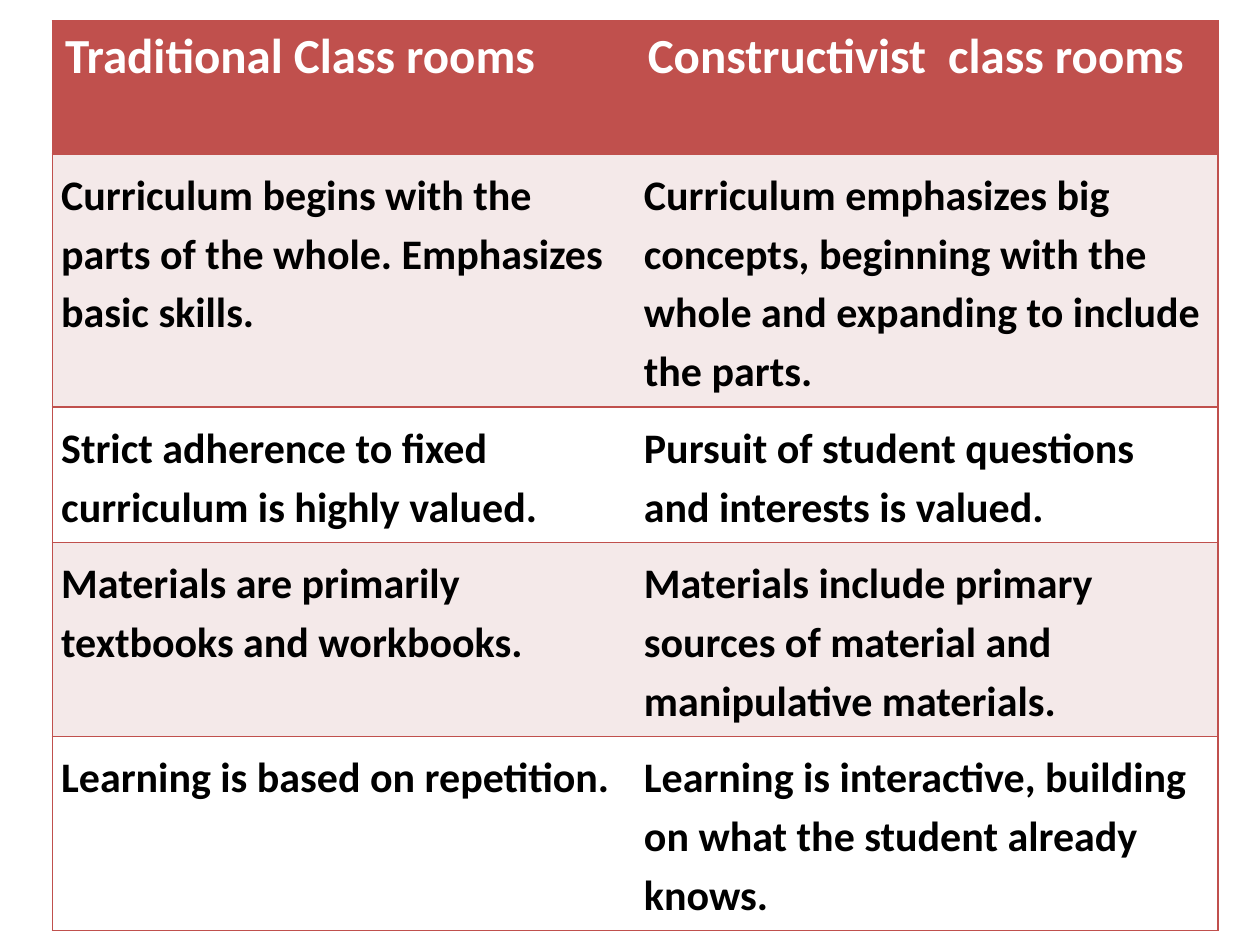
from dataclasses import dataclass

from lxml import etree
from pptx import Presentation
from pptx import util as u
from pptx.dml.color import RGBColor
from pptx.oxml import ns

Pt = u.Pt


@dataclass(frozen=True)
class Theme:
    font: str = "Calibri"
    accent: str = "C0504D"
    band: str = "F4E9E9"
    plain: str = "FFFFFF"
    ink: str = "000000"
    header_size: int = 28
    body_size: int = 24
    line_spacing: float = 1.15
    body_inset: int = 5
    border: int = 1


THEME = Theme()

ROWS = [
    ("Traditional Class rooms", "Constructivist  class rooms"),
    ("Curriculum begins with the parts of the whole. Emphasizes basic skills.",
     "Curriculum emphasizes big concepts, beginning with the whole and "
     "expanding to include the parts."),
    ("Strict adherence to fixed curriculum is highly valued.",
     "Pursuit of student questions and interests is valued."),
    ("Materials are primarily textbooks and workbooks.",
     "Materials include primary sources of material and manipulative materials."),
    ("Learning is based on repetition.",
     "Learning is interactive, building on what the student already knows."),
]
ROW_WEIGHTS = [76, 144.5, 77, 111, 111]


def set_borders(cell, sides):
    tc_pr = cell._tc.get_or_add_tcPr()
    for i, side in enumerate("LRTB"):
        ln = etree.Element(ns.qn(f"a:ln{side}"), w=str(Pt(THEME.border)))
        if side in sides:
            fill = etree.SubElement(ln, ns.qn("a:solidFill"))
            etree.SubElement(fill, ns.qn("a:srgbClr"), val=THEME.accent)
        else:
            etree.SubElement(ln, ns.qn("a:noFill"))
        tc_pr.insert(i, ln)


def style_cell(cell, text, fill, color, size):
    cell.text = text
    cell.fill.solid()
    cell.fill.fore_color.rgb = RGBColor.from_string(fill)
    p = cell.text_frame.paragraphs[0]
    p.font.name = THEME.font
    p.font.size = Pt(size)
    p.font.bold = True
    p.font.color.rgb = RGBColor.from_string(color)
    return p


def add_comparison(s, left, top, width, height):
    n_cols = len(ROWS[0])
    table = s.shapes.add_table(len(ROWS), n_cols, Pt(left), Pt(top),
                               Pt(width), Pt(height)).table
    for col in table.columns:
        col.width = Pt(width / n_cols)
    for r, texts in enumerate(ROWS):
        table.rows[r].height = Pt(height * ROW_WEIGHTS[r] / sum(ROW_WEIGHTS))
        for c, text in enumerate(texts):
            cell = table.cell(r, c)
            if r == 0:
                style_cell(cell, text, THEME.accent, THEME.plain, THEME.header_size)
            else:
                fill = THEME.band if r % 2 else THEME.plain
                p = style_cell(cell, text, fill, THEME.ink, THEME.body_size)
                p.line_spacing = THEME.line_spacing
                cell.margin_left = cell.margin_right = Pt(THEME.body_inset)
                cell.margin_top = cell.margin_bottom = Pt(THEME.body_inset)
            set_borders(cell, "LTB" if c == 0 else "RTB")


def main():
    prs = Presentation()
    prs.slide_width, prs.slide_height = Pt(720), Pt(540)
    s = prs.slides.add_slide(prs.slide_layouts[6])
    add_comparison(s, 30, 12, 666, 519.5)
    prs.save("out.pptx")


if __name__ == "__main__":
    main()
